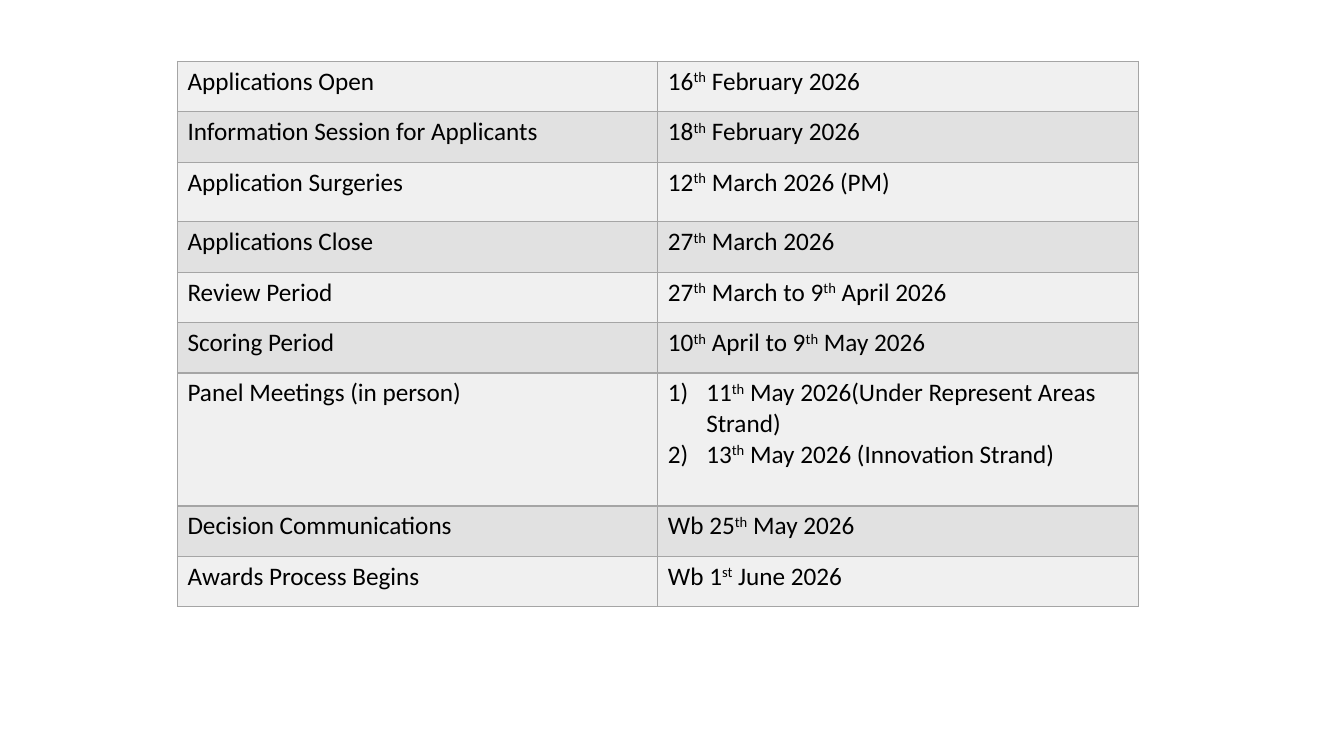
from lxml.etree import SubElement
from pptx import Presentation
from pptx.dml.color import RGBColor
from pptx.oxml import parse_xml
from pptx.oxml.ns import nsdecls, qn
from pptx.util import Inches, Pt

TIMELINE = [
    ("Applications Open", ["16^th^ February 2026"]),
    ("Information Session for Applicants", ["18^th^ February 2026"]),
    ("Application Surgeries", ["12^th^ March 2026 (PM)"]),
    ("Applications Close", ["27^th^ March 2026"]),
    ("Review Period", ["27^th^ March to 9^th^ April 2026"]),
    ("Scoring Period", ["10^th^ April to 9^th^ May 2026"]),
    ("Panel Meetings (in person)", [
        "11^th^ May 2026(Under Represent Areas Strand)",
        "13^th^ May 2026 (Innovation Strand)",
    ]),
    ("Decision Communications", ["Wb 25^th^ May 2026"]),
    ("Awards Process Begins", ["Wb 1^st^ June 2026"]),
]
COLORS = {"text": "000000", "light": "F0F0F0", "dark": "E1E1E1", "border": "A5A5A5"}
FONT = {"name": "Calibri", "size": Pt(18)}
PLAIN_TABLE = {"first_row": False, "horz_banding": False}
PAGE_WIDTH, PAGE_HEIGHT = 13.33, 7.5
LEFT, TOP, COLUMN_WIDTH = 1.76, 0.61, 4.765
ROW_HEIGHT = 0.5
TALL_ROWS = {"Application Surgeries": 0.59, "Panel Meetings (in person)": 1.32}
LIST_INDENT = Inches(0.38)


def set_values(target, values):
    for name, value in values.items():
        setattr(target, name, value)


def add_borders(cell):
    properties = cell._tc.get_or_add_tcPr()
    for index, side in enumerate(("lnL", "lnR", "lnT", "lnB")):
        properties.insert(index, parse_xml(
            f'<a:{side} {nsdecls("a")} w="{Pt(1)}"><a:solidFill>'
            f'<a:srgbClr val="{COLORS["border"]}"/></a:solidFill></a:{side}>'))


def number_paragraph(para):
    properties = para._p.get_or_add_pPr()
    properties.set("marL", str(LIST_INDENT))
    properties.set("indent", str(-LIST_INDENT))
    SubElement(properties, qn("a:buAutoNum"), type="arabicParenR")


def write_cell(cell, lines, fill):
    cell.fill.solid()
    cell.fill.fore_color.rgb = RGBColor.from_string(COLORS[fill])
    add_borders(cell)
    frame = cell.text_frame
    for index, line in enumerate(lines):
        para = frame.add_paragraph() if index else frame.paragraphs[0]
        if len(lines) > 1:
            number_paragraph(para)
        for position, text in enumerate(line.split("^")):
            span = para.add_run()
            span.text = text
            set_values(span.font, FONT)
            span.font.color.rgb = RGBColor.from_string(COLORS["text"])
            if position % 2:
                span._r.get_or_add_rPr().set("baseline", "30000")


def main():
    deck = Presentation()
    set_values(deck, {"slide_width": Inches(PAGE_WIDTH), "slide_height": Inches(PAGE_HEIGHT)})
    page = deck.slides.add_slide(deck.slide_layouts[6])
    heights = [TALL_ROWS.get(stage, ROW_HEIGHT) for stage, dates in TIMELINE]
    table = page.shapes.add_table(
        len(TIMELINE), 2, Inches(LEFT), Inches(TOP),
        Inches(2 * COLUMN_WIDTH), Inches(sum(heights))).table
    set_values(table, PLAIN_TABLE)
    for column in table.columns:
        column.width = Inches(COLUMN_WIDTH)
    for index, (stage, dates) in enumerate(TIMELINE):
        table.rows[index].height = Inches(heights[index])
        fill = "dark" if index % 2 else "light"
        write_cell(table.cell(index, 0), [stage], fill)
        write_cell(table.cell(index, 1), dates, fill)
    deck.save("out.pptx")


if __name__ == "__main__":
    main()
